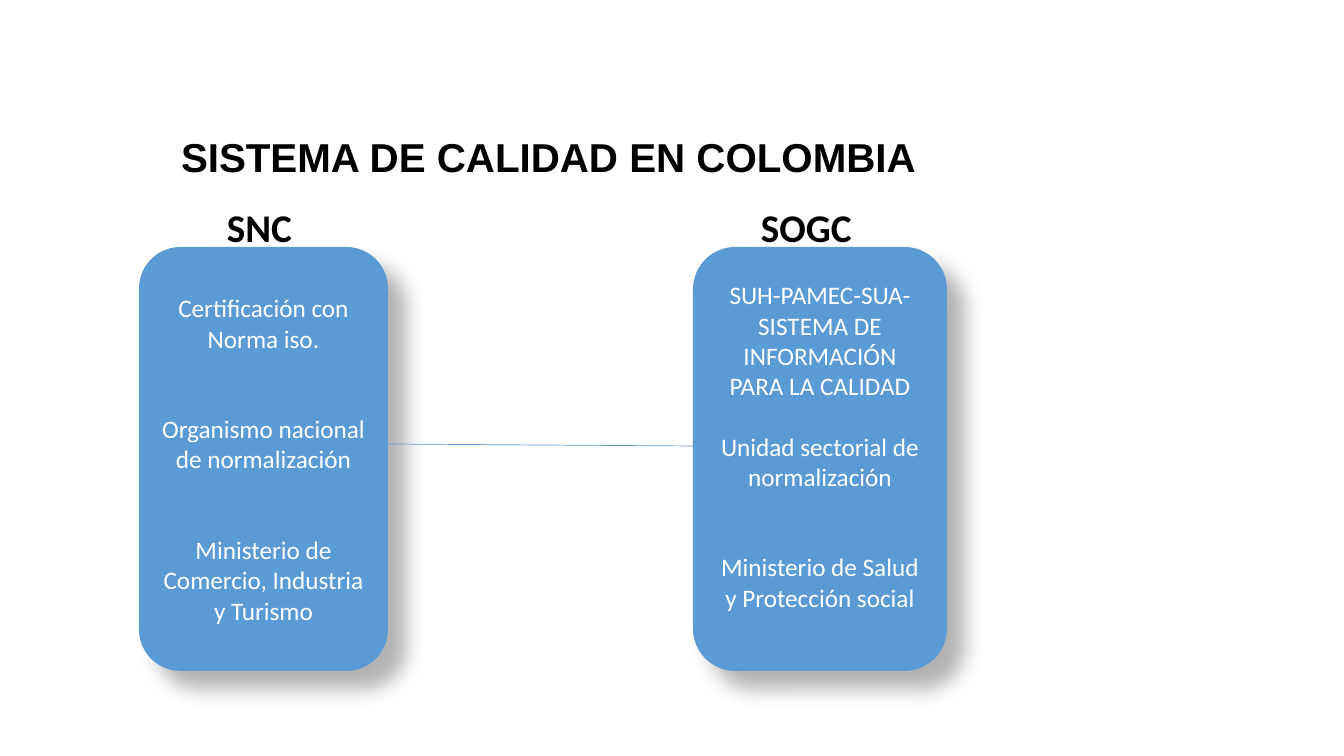
from lxml import etree
from pptx import Presentation
from pptx import util as u
from pptx.dml.color import RGBColor
from pptx.enum import shapes, text
from pptx.oxml import parse_xml
from pptx.oxml.ns import nsdecls, qn

THEME = {
    "blue": RGBColor.from_string("5B9BD5"),
    "white": RGBColor.from_string("FFFFFF"),
    "black": RGBColor.from_string("000000"),
    "title_font": "Arial",
    "body_font": "Calibri",
    "title_size": u.Pt(28.8),
    "heading_size": u.Pt(28),
    "item_size": u.Pt(18),
    "line_width": u.Pt(0.5),
}
SHADOW = (
    f'<a:outerShdw {nsdecls("a")} blurRad="{u.Pt(15)}" dist="{u.Pt(18)}" '
    'dir="2700000" algn="tl" rotWithShape="0">'
    '<a:srgbClr val="000000"><a:alpha val="30000"/></a:srgbClr></a:outerShdw>'
)
BLANK_LINE = u.Pt(21.6)


def px(n):
    return u.Emu(round(n * 914400 / 100.8))


def add_heading(wording, left, top, width, font, size):
    heading = slide.shapes.add_textbox(px(left), px(top), px(width), px(50))
    frame = heading.text_frame
    frame.word_wrap = True
    frame.vertical_anchor = text.MSO_ANCHOR.MIDDLE
    frame.margin_left = frame.margin_right = 0
    frame.margin_top = frame.margin_bottom = 0
    line = frame.paragraphs[0]
    line.text = wording
    line.font.name, line.font.size = font, size
    line.font.bold = True
    line.font.color.rgb = THEME["black"]


prs = Presentation()
prs.slide_width, prs.slide_height = px(1344), px(756)
slide = prs.slides.add_slide(prs.slide_layouts[6])

# Title
add_heading("SISTEMA DE CALIDAD EN COLOMBIA", 181, 131, 900,
            THEME["title_font"], THEME["title_size"])

# The two systems: heading, its left, panel left and width, bottom inset,
# then each item with the number of blank lines' space before it
systems = [
    ("SNC", 227, 139, 249, 5, [
        ("Certificación con Norma iso.", 0),
        ("Organismo nacional de normalización", 2),
        ("Ministerio de Comercio, Industria y Turismo", 2),
    ]),
    ("SOGC", 761, 693, 254, 31, [
        ("SUH-PAMEC-SUA-SISTEMA DE INFORMACIÓN PARA LA CALIDAD", 0),
        ("Unidad sectorial de normalización", 1),
        ("Ministerio de Salud y Protección social", 2),
    ]),
]
for name, name_left, left, width, bottom_inset, items in systems:
    add_heading(name, name_left, 202, 180,
                THEME["body_font"], THEME["heading_size"])

    panel = slide.shapes.add_shape(
        shapes.MSO_SHAPE.ROUNDED_RECTANGLE, px(left), px(247), px(width), px(424))
    panel.fill.solid()
    panel.fill.fore_color.rgb = THEME["blue"]
    panel.line.fill.background()
    panel.shadow.inherit = False
    effects = panel.element.spPr.find(qn("a:effectLst"))
    effects.append(parse_xml(SHADOW))

    frame = panel.text_frame
    frame.word_wrap = True
    frame.vertical_anchor = text.MSO_ANCHOR.MIDDLE
    frame.margin_bottom = px(bottom_inset)
    for i, (wording, blank_lines) in enumerate(items):
        item = frame.add_paragraph() if i else frame.paragraphs[0]
        item.text = wording
        item.alignment = text.PP_ALIGN.CENTER
        if blank_lines:
            item.space_before = blank_lines * BLANK_LINE
        item.font.name, item.font.size = THEME["body_font"], THEME["item_size"]
        item.font.color.rgb = THEME["white"]

# Link between the two systems
link = slide.shapes.add_connector(
    shapes.MSO_CONNECTOR.STRAIGHT, px(388), px(444), px(693), px(446))
link.line.color.rgb = THEME["blue"]
link.line.width = THEME["line_width"]
etree.SubElement(link.element.spPr, qn("a:effectLst"))

prs.save("out.pptx")
